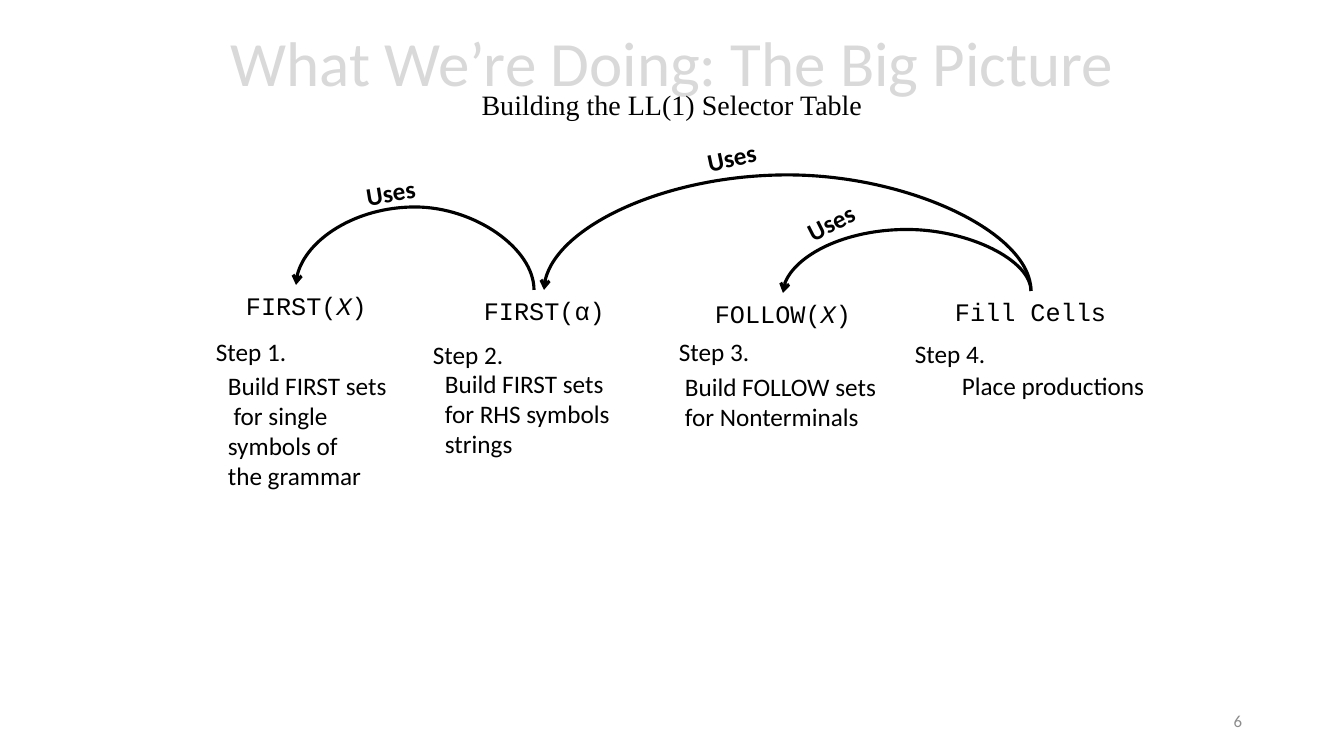
from pptx import Presentation, util as u
from pptx.dml.color import RGBColor
from pptx.enum import shapes, text
from pptx.oxml import parse_xml
from pptx.oxml.ns import nsdecls, qn

PX = 12192000 / 1344
BLACK = RGBColor(0, 0, 0)
PALE = RGBColor(0xD9, 0xD9, 0xD9)
GREY = RGBColor(0x8C, 0x8C, 0x8C)
SANS, MONO, SERIF = "Calibri", "Courier New", "Times New Roman"

# text, left, top, width
HEADS = [("FIRST(X)", 236, 285, 142), ("FIRST(α)", 474, 290, 142),
         ("FOLLOW(X)", 705, 293, 157), ("Fill Cells", 945, 291, 172)]
# left, top
STEPS = [(206, 331), (423, 334), (669, 331), (905, 333)]
# lines, left, top, width
NOTES = [(["Build FIRST sets", " for single", "symbols of", "the grammar"], 218, 365, 180),
         (["Build FIRST sets", "for RHS symbols", "strings"], 435, 363, 193),
         (["Build FOLLOW sets", "for Nonterminals"], 675, 366, 220),
         (["Place productions"], 952, 365, 205)]
# left, top, angle
USES = [(356, 172, 350.7), (796, 202, 333.2), (697, 137, 347.9)]
# start x, y, end x, y, rise above the start
ARCS = [(534, 290, 296, 285, 83), (1031, 291, 783, 293, 62), (1031, 291, 544, 290, 117)]


def px(n):
    return u.Emu(round(n * PX))


def style(font, name, size, color=BLACK):
    font.name, font.size = name, u.Pt(size)
    font.color.rgb = color


def add_box(slide, x, y, w, h, wrap=False):
    box = slide.shapes.add_textbox(px(x), px(y), px(w), px(h))
    box.text_frame.word_wrap = wrap
    return box


def add_text(slide, lines, x, y, w, face=SANS):
    box = add_box(slide, x, y, w, 10 + 30 * len(lines))
    box.text_frame.text = "\n".join(lines)
    for para in box.text_frame.paragraphs:
        style(para.font, face, 18)
    return box


def add_head(slide, label, x, y, w):
    """Add a set name, with its symbol X in italics."""
    box = add_text(slide, [""], x, y, w, MONO)
    para = box.text_frame.paragraphs[0]
    for part in filter(None, label.partition("X")):
        run = para.add_run()
        run.text = part
        if part == "X":
            run.font.italic = True


def add_uses(slide, x, y, angle):
    box = add_text(slide, ["Uses"], x, y, 70)
    box.text_frame.paragraphs[0].font.bold = True
    box.rotation = angle


def add_arc(slide, x0, y0, x1, y1, rise):
    """Add a curved connector turned on its side, so that it bows upwards."""
    w, h = abs(y1 - y0), abs(x1 - x0)
    left, top = (x0 + x1 - w) / 2, (y0 + y1 - h) / 2
    arc = slide.shapes.add_connector(
        shapes.MSO_CONNECTOR.CURVE, px(left), px(top), px(left + w), px(top + h))
    arc.line.color.rgb = BLACK
    arc.line.width = u.Pt(2.25)
    props = arc._element.spPr
    frame = props.find(qn("a:xfrm"))
    frame.set("rot", str(270 * 60000))
    frame.set("flipV", "1")
    if y1 > y0:
        frame.set("flipH", "1")
    bend = round(100000 * rise / (y0 - y1))
    geom = props.find(qn("a:prstGeom"))
    geom.get_or_add_avLst().append(parse_xml(
        f'<a:gd {nsdecls("a")} name="adj1" fmla="val {bend}"/>'))
    arc.line._get_or_add_ln().append(parse_xml(
        f'<a:tailEnd {nsdecls("a")} type="arrow"/>'))
    props.append(parse_xml(f'<a:effectLst {nsdecls("a")}/>'))


def add_title(slide):
    frame = add_box(slide, 168, 9, 1008, 146, wrap=True).text_frame
    frame.vertical_anchor = text.MSO_ANCHOR.MIDDLE
    para = frame.paragraphs[0]
    para.alignment = text.PP_ALIGN.CENTER
    para.line_spacing = 0.7
    main_run = para.add_run()
    main_run.text = "What We’re Doing: The Big Picture"
    style(main_run.font, SANS, 45, PALE)
    para.add_line_break()
    sub = para.add_run()
    sub.text = "Building the LL(1) Selector Table"
    style(sub.font, SERIF, 20)


def add_number(slide):
    frame = add_box(slide, 950, 701, 302, 40, wrap=True).text_frame
    frame.vertical_anchor = text.MSO_ANCHOR.MIDDLE
    para = frame.paragraphs[0]
    para.text = "6"
    para.alignment = text.PP_ALIGN.RIGHT
    style(para.font, SANS, 12, GREY)


def main():
    deck = Presentation()
    deck.slide_width, deck.slide_height = px(1344), px(756)
    slide = deck.slides.add_slide(deck.slide_layouts[6])
    add_title(slide)
    add_number(slide)
    for head in HEADS:
        add_head(slide, *head)
    for arc in ARCS:
        add_arc(slide, *arc)
    for uses in USES:
        add_uses(slide, *uses)
    for i, (x, y) in enumerate(STEPS, 1):
        add_text(slide, [f"Step {i}."], x, y, 92)
    for note in NOTES:
        add_text(slide, *note)
    deck.save("out.pptx")


if __name__ == "__main__":
    main()
